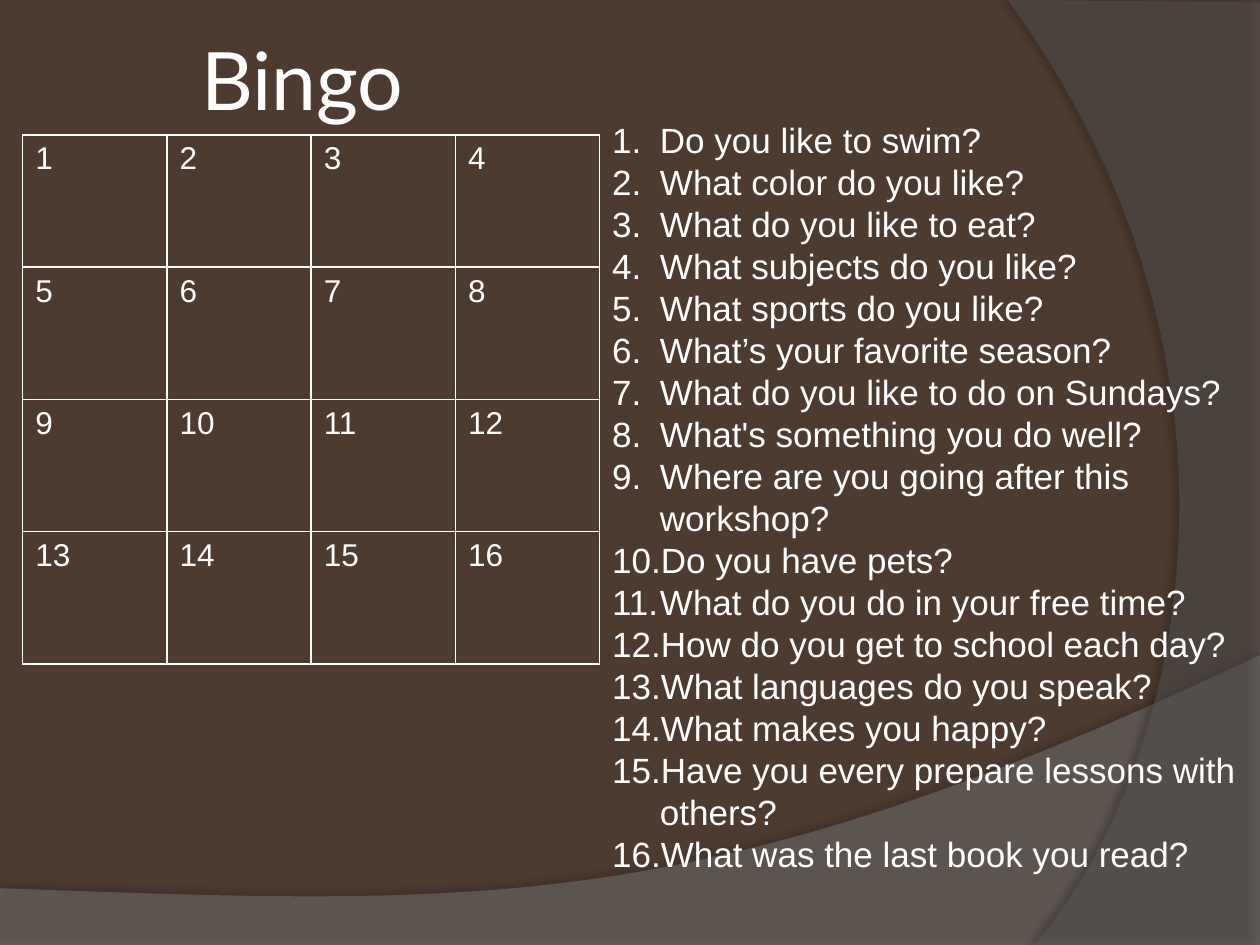
from lxml import etree
from pptx import Presentation
from pptx.dml.color import RGBColor
from pptx.enum.text import MSO_ANCHOR, PP_ALIGN
from pptx.oxml import parse_xml
from pptx.oxml.ns import nsdecls, qn
from pptx.util import Inches, Pt

MIDDLE, CENTER = MSO_ANCHOR.MIDDLE, PP_ALIGN.CENTER

THEME = {
    "back": "4E3B30", "wave": "7F7F7F", "arc": "5E5E5E",
    "shade": "000000", "ink": "FFFFFF",
    "head": ("Lato", 46), "cell": ("Arial", 18), "list": ("Arial", 20),
}
WIDE, HIGH = Inches(10), Inches(7.5)
GRID = 4
LEFT, TOP, SIDE, TALL = Inches(0.18), Inches(1.07), Inches(4.58), Inches(4.2)
STEPS = 40

ASKS = [
    "Do you like to swim?",
    "What color do you like?",
    "What do you like to eat?",
    "What subjects do you like?",
    "What sports do you like?",
    "What’s your favorite season?",
    "What do you like to do on Sundays?",
    "What's something you do well?",
    "Where are you going after this workshop?",
    "Do you have pets?",
    "What do you do in your free time?",
    "How do you get to school each day?",
    "What languages do you speak?",
    "What makes you happy?",
    "Have you every prepare lessons with others?",
    "What was the last book you read?",
]


def style(para, kind):
    name, size = THEME[kind]
    para.font.name, para.font.size = name, Pt(size)
    para.font.color.rgb = RGBColor.from_string(THEME["ink"])


def curve(a, b, c, d):
    """Points along a cubic curve, in inches."""
    for i in range(STEPS + 1):
        t = i / STEPS
        u = 1 - t
        yield tuple(u**3 * p + 3 * u * u * t * q + 3 * u * t * t * r + t**3 * s
                    for p, q, r, s in zip(a, b, c, d))


deck = Presentation()
deck.slide_width, deck.slide_height = WIDE, HIGH
slide = deck.slides.add_slide(deck.slide_layouts[6])
slide.background.fill.solid()
slide.background.fill.fore_color.rgb = RGBColor.from_string(THEME["back"])

# Translucent sweeps: colour, opacity, outline, shadow opacity, distance, angle
wave = [(0, 7.5), (10, 7.5), *curve((10, 5.2), (5.59, 7.29), (3.91, 7.19), (0, 7.05))]
arc = [(10, 0.02), (10, 7.5), *curve((8.21, 7.5), (9.35, 6.19), (10.18, 3), (8, 0))]
for tone, alpha, dots, dark, blur, dist, turn in (
        ("wave", 45, wave, 35, 4, 3.5, 270), ("arc", 40, arc, 45, 4, 4, 180)):
    dots = [(Inches(x), Inches(y)) for x, y in dots]
    pen = slide.shapes.build_freeform(*dots[0], scale=1.0)
    pen.add_line_segments(dots[1:], close=True)
    sweep = pen.convert_to_shape()
    sweep.fill.solid()
    sweep.fill.fore_color.rgb = RGBColor.from_string(THEME[tone])
    sweep.line.fill.background()
    sweep.shadow.inherit = False
    props = sweep._element.spPr
    color = props.find(qn("a:solidFill")).find(qn("a:srgbClr"))
    etree.SubElement(color, qn("a:alpha"), val=str(alpha * 1000))
    props.find(qn("a:effectLst")).append(parse_xml(
        f'<a:outerShdw {nsdecls("a")} blurRad="{Pt(blur)}" dist="{Pt(dist)}" '
        f'dir="{turn * 60000}" algn="ctr" rotWithShape="0">'
        f'<a:srgbClr val="{THEME["shade"]}"><a:alpha val="{dark * 1000}"/></a:srgbClr>'
        '</a:outerShdw>'))

# Title
head = slide.shapes.add_textbox(0, 0, int(WIDE * 0.48), HIGH // 6).text_frame
head.word_wrap, head.vertical_anchor = True, MIDDLE
head.margin_left = head.margin_right = Inches(0.05)
head.text = "Bingo"
head.paragraphs[0].alignment = CENTER
style(head.paragraphs[0], "head")

# Bingo card
card = slide.shapes.add_table(GRID, GRID, LEFT, TOP, SIDE, TALL).table
card.first_row = card.horz_banding = False
for row in card.rows:
    row.height = TALL // GRID
for num, cell in enumerate(card.iter_cells(), 1):
    cell.text = str(num)
    style(cell.text_frame.paragraphs[0], "cell")
    cell.fill.background()
    props = cell._tc.get_or_add_tcPr()
    for at, edge in enumerate(("lnL", "lnR", "lnT", "lnB")):
        props.insert(at, parse_xml(
            f'<a:{edge} {nsdecls("a")} w="{Pt(1)}"><a:solidFill>'
            f'<a:srgbClr val="{THEME["ink"]}"/></a:solidFill></a:{edge}>'))

# Numbered questions
asks = slide.shapes.add_textbox(
    LEFT + SIDE, Inches(0.89), WIDE - LEFT - SIDE, Inches(6.13)).text_frame
asks.word_wrap = True
asks.text = "\n".join(ASKS)
for para in asks.paragraphs:
    style(para, "list")
    props = para._p.get_or_add_pPr()
    props.set("marL", str(Inches(0.38)))
    props.set("indent", str(-Inches(0.38)))
    etree.SubElement(props, qn("a:buFont")).set("typeface", "Arial")
    etree.SubElement(props, qn("a:buAutoNum")).set("type", "arabicPeriod")
    props.append(props.find(qn("a:defRPr")))

deck.save("out.pptx")
